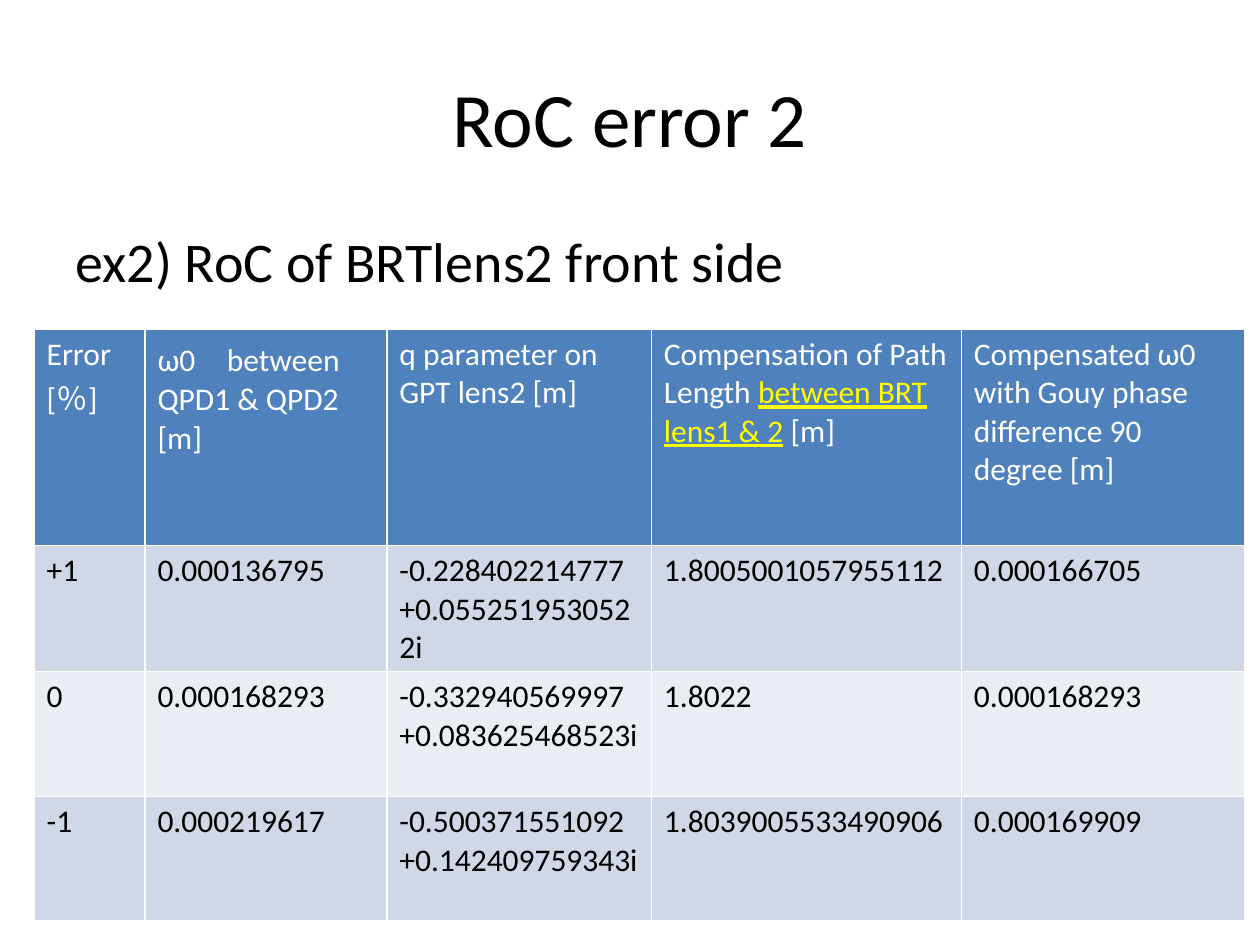
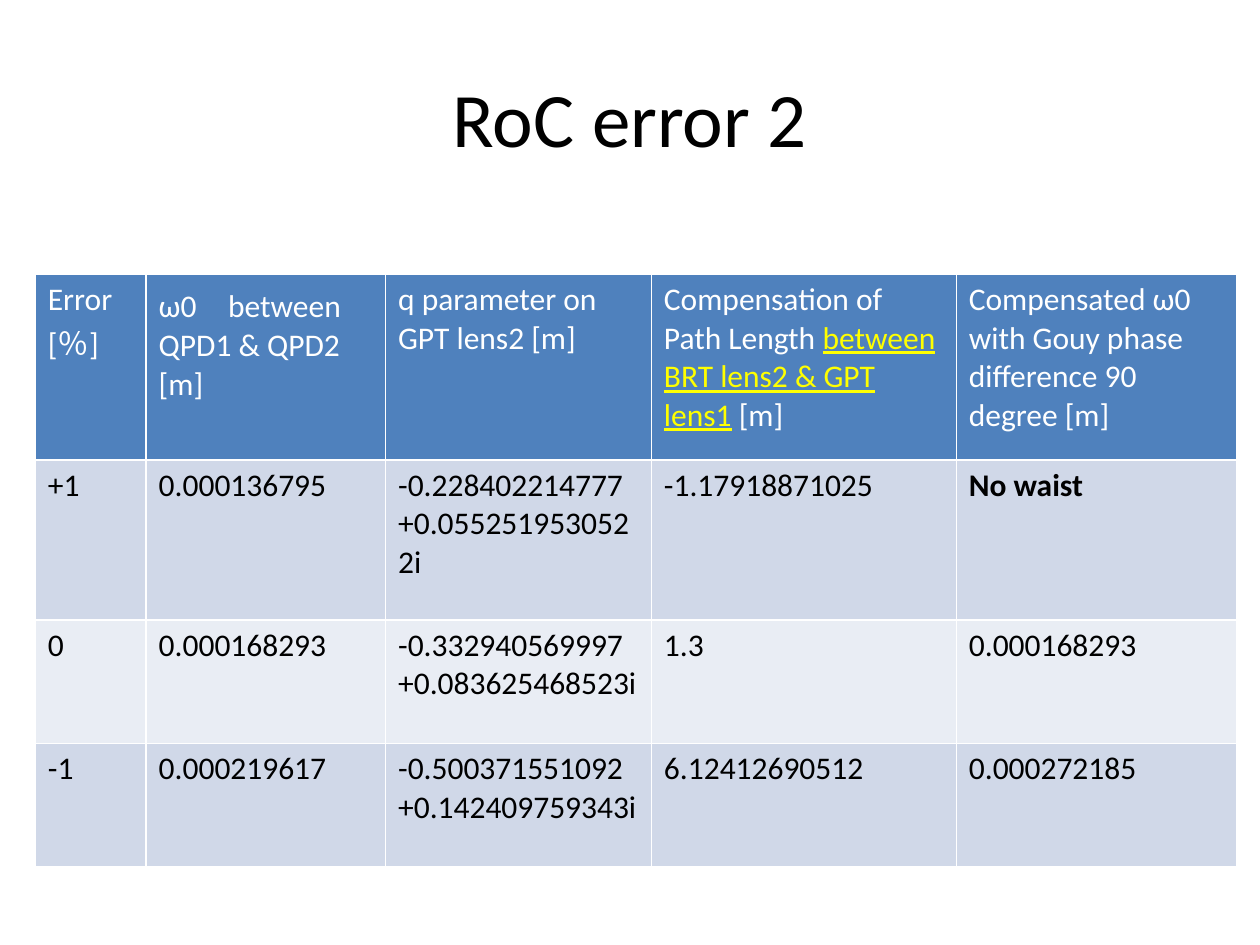
from lxml import etree
from pptx import Presentation
from pptx import util as u
from pptx.dml.color import RGBColor
from pptx.enum import text
from pptx.oxml import ns

COLOURS = {"ink": "000000", "white": "FFFFFF", "highlight": "FFFF00",
           "header": "4F81BD", "odd": "D0D8E8", "even": "E9EDF4"}

# Shared text formats
TITLE = {"size": u.Pt(44)}
SUBTITLE = {"size": u.Pt(32)}
CELL = {"size": u.Pt(18), "bold": False}
LINK = CELL | {"underline": True}
STRONG = CELL | {"bold": True}


def add_run(paragraph, wording, formats, colour="ink"):
    run = paragraph.add_run()
    run.text = wording
    for attribute, value in ({"name": "Calibri"} | formats).items():
        setattr(run.font, attribute, value)
    run.font.color.rgb = RGBColor.from_string(COLOURS[colour])


def style_cell(cell, fill):
    # Borders come before the fill in the cell properties
    properties = cell._tc.get_or_add_tcPr()
    for side in ("lnL", "lnR", "lnT", "lnB"):
        line = etree.SubElement(properties, ns.qn(f"a:{side}"), w=str(u.Pt(1)))
        solid = etree.SubElement(line, ns.qn("a:solidFill"))
        etree.SubElement(solid, ns.qn("a:srgbClr"), val=COLOURS["white"])
    cell.fill.solid()
    cell.fill.fore_color.rgb = RGBColor.from_string(COLOURS[fill])


# Columns shared by both tables: error, waist and q parameter
measured = [("+1", "0.000136795", "-0.228402214777+0.0552519530522i"),
            ("0", "0.000168293", "-0.332940569997+0.083625468523i"),
            ("-1", "0.000219617", "-0.500371551092+0.142409759343i")]

# What differs from slide to slide
slides = [
    {"subtitle": "ex2) RoC of BRTlens2 front side",
     "between": "between BRT lens1 & 2",
     "place": (0.27, 2.61),
     "widths": (0.88, 1.92, 2.1, 2.46, 2.25),
     "heights": (1.72, 0.99, 0.99, 0.99),
     "compensated": [("1.8005001057955112", "0.000166705"),
                     ("1.8022", "0.000168293"),
                     ("1.8039005533490906", "0.000169909")]},
    {"subtitle": None,
     "between": "between BRT lens2 & GPT lens1",
     "place": (0.28, 2.18),
     "widths": (0.88, 1.9, 2.11, 2.42, 2.23),
     "heights": (1.47, 1.27, 0.98, 0.98),
     "compensated": [("-1.17918871025", "No waist"),
                     ("1.3", "0.000168293"),
                     ("6.12412690512", "0.000272185")]},
]

deck = Presentation()
deck.slide_width, deck.slide_height = u.Inches(10), u.Inches(7.5)

for content in slides:
    slide = deck.slides.add_slide(deck.slide_layouts[6])

    # Title
    title = slide.shapes.add_textbox(u.Inches(0.5), u.Inches(0.3),
                                     u.Inches(9), u.Inches(1.25)).text_frame
    title.word_wrap = True
    title.vertical_anchor = text.MSO_ANCHOR.MIDDLE
    title.paragraphs[0].alignment = text.PP_ALIGN.CENTER
    add_run(title.paragraphs[0], "RoC error 2", TITLE)

    # Subtitle
    if content["subtitle"]:
        subtitle = slide.shapes.add_textbox(u.Inches(0.5), u.Inches(1.75),
                                            u.Inches(9), u.Inches(4.95)).text_frame
        subtitle.word_wrap = True
        subtitle.paragraphs[0].space_before = u.Pt(6.4)
        add_run(subtitle.paragraphs[0], content["subtitle"], SUBTITLE)

    # Table grid
    left, top = content["place"]
    widths, heights = content["widths"], content["heights"]
    results = slide.shapes.add_table(
        len(heights), len(widths), u.Inches(left), u.Inches(top),
        u.Inches(sum(widths)), u.Inches(sum(heights))).table
    for column, width in zip(results.columns, widths):
        column.width = u.Inches(width)
    for row, height in zip(results.rows, heights):
        row.height = u.Inches(height)

    # Header row, with the compensated path highlighted
    headings = [["Error [％]"], ["ω0　between QPD1 & QPD2 [m]"],
                ["q parameter on GPT lens2 [m]"],
                ["Compensation of Path Length ", content["between"], " [m]"],
                ["Compensated ω0 with Gouy phase difference 90 degree [m]"]]
    for cell, parts in zip(results.rows[0].cells, headings):
        style_cell(cell, "header")
        for part in parts:
            linked = part == content["between"]
            add_run(cell.text_frame.paragraphs[0], part,
                    LINK if linked else CELL, "highlight" if linked else "white")

    # Value rows in alternating bands
    for number, (start, end) in enumerate(zip(measured, content["compensated"]), 1):
        for cell, value in zip(results.rows[number].cells, start + end):
            style_cell(cell, "odd" if number % 2 else "even")
            add_run(cell.text_frame.paragraphs[0], value,
                    STRONG if value == "No waist" else CELL)

deck.save("out.pptx")
